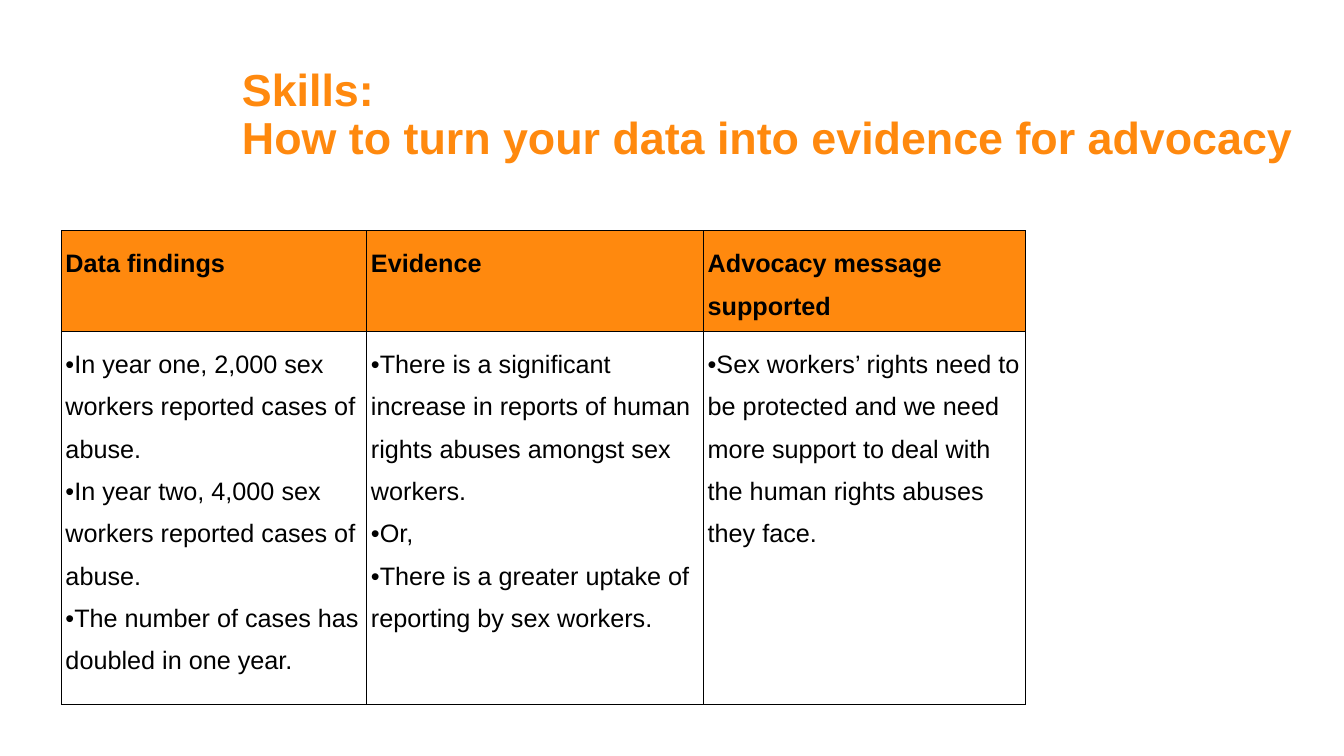
import pptx
import pptx.dml.color
import pptx.enum.text
import pptx.oxml
import pptx.oxml.ns
import pptx.util
from pptx.util import Inches

FONT = "Arial"
ORANGE = "FF890E"
BLACK = "000000"
COLUMN_WIDTHS = [3.03, 3.34, 3.19]
ROW_HEIGHTS = [0.94, 3.46]
HEADINGS = ["Data findings", "Evidence", "Advocacy message supported"]
POINTS = [
    ["In year one, 2,000 sex workers reported cases of abuse.",
     "In year two, 4,000 sex workers reported cases of abuse.",
     "The number of cases has doubled in one year."],
    ["There is a significant increase in reports of human rights abuses amongst sex workers.",
     "Or,",
     "There is a greater uptake of reporting by sex workers."],
    ["Sex workers’ rights need to be protected and we need more support to deal with "
     "the human rights abuses they face."],
]


def rgb(color):
    return pptx.dml.color.RGBColor.from_string(color)


def add_xml(parent, xml):
    namespaces = pptx.oxml.ns.nsdecls("a")
    parent.append(pptx.oxml.parse_xml(xml.replace(" ", f" {namespaces} ", 1)))


def write_text(frame, lines, size=18, color=BLACK, bold=False, spacing=1.5, bullet=None):
    """Fill a text frame with one paragraph for each line."""
    frame.word_wrap = True
    for index, line in enumerate(lines):
        para = frame.add_paragraph() if index else frame.paragraphs[0]
        para.text = line
        if bullet:
            properties = para._p.get_or_add_pPr()
            properties.set("marL", "0")
            properties.set("indent", "0")
            add_xml(properties, f'<a:buFont typeface="{FONT}"/>')
            add_xml(properties, f'<a:buChar char="{bullet}"/>')
        para.line_spacing = spacing
        for span in para.runs:
            span.font.name = FONT
            span.font.size = pptx.util.Pt(size)
            span.font.bold = bold
            span.font.color.rgb = rgb(color)


def format_cell(cell, fill=None):
    """Set margins, thin black borders and fill."""
    cell.margin_left = cell.margin_right = Inches(0.04)
    cell.margin_top = cell.margin_bottom = Inches(0.05)
    properties = cell._tc.get_or_add_tcPr()
    for side in "LRTB":
        add_xml(properties, f'<a:ln{side} w="{pptx.util.Pt(0.8)}"><a:solidFill>'
                            f'<a:srgbClr val="{BLACK}"/></a:solidFill></a:ln{side}>')
    if fill:
        cell.fill.solid()
        cell.fill.fore_color.rgb = rgb(fill)
    else:
        cell.fill.background()


def add_title(page, left, top, width, height):
    box = page.shapes.add_textbox(Inches(left), Inches(top), Inches(width), Inches(height))
    frame = box.text_frame
    frame.margin_left = frame.margin_right = frame.margin_top = frame.margin_bottom = 0
    frame.vertical_anchor = pptx.enum.text.MSO_ANCHOR.MIDDLE
    write_text(frame, ["Skills: \vHow to turn your data into evidence for advocacy"],
               size=32, color=ORANGE, bold=True, spacing=0.9)


def add_evidence_table(page, left, top):
    table = page.shapes.add_table(
        len(ROW_HEIGHTS), len(COLUMN_WIDTHS), Inches(left), Inches(top),
        Inches(sum(COLUMN_WIDTHS)), Inches(sum(ROW_HEIGHTS))).table
    table.horz_banding = False
    for row, height in zip(table.rows, ROW_HEIGHTS):
        row.height = Inches(height)
    for index, width in enumerate(COLUMN_WIDTHS):
        table.columns[index].width = Inches(width)
        heading, body = table.cell(0, index), table.cell(1, index)
        format_cell(heading, fill=ORANGE)
        write_text(heading.text_frame, [HEADINGS[index]], bold=True)
        format_cell(body)
        write_text(body.text_frame, POINTS[index], bullet="•")


def main():
    deck = pptx.Presentation()
    deck.slide_width, deck.slide_height = Inches(13.33), Inches(7.5)
    page = deck.slides.add_slide(deck.slide_layouts[6])
    add_title(page, 2.4, 0.48, 10.63, 1.34)
    add_evidence_table(page, 0.61, 2.29)
    deck.save("out.pptx")


if __name__ == "__main__":
    main()
